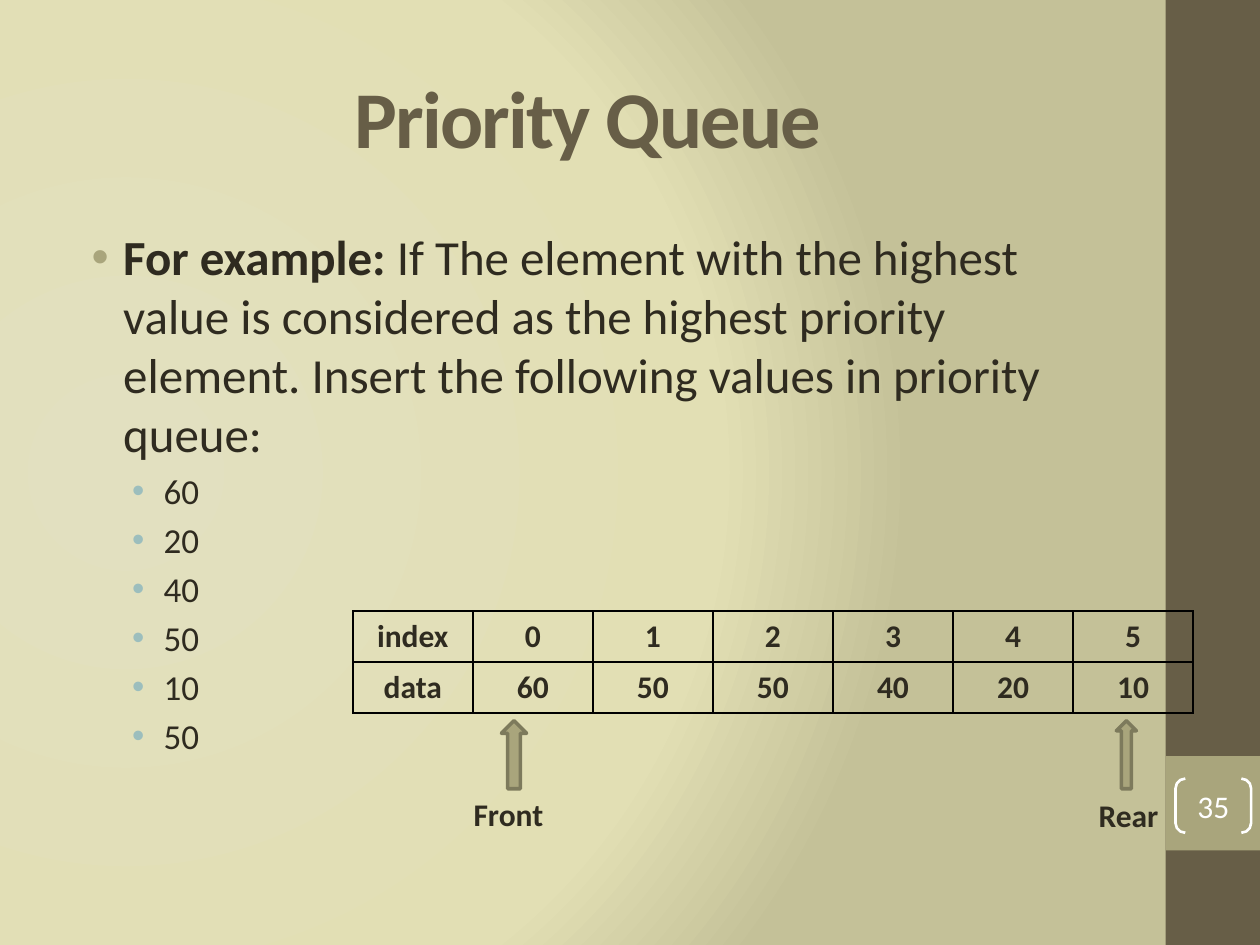
from dataclasses import dataclass

from lxml.etree import SubElement
from pptx import Presentation
from pptx.dml.color import RGBColor
from pptx.enum.shapes import MSO_SHAPE as Shape
from pptx.enum.text import MSO_ANCHOR as Anchor, PP_ALIGN as Align
from pptx.oxml import parse_xml
from pptx.oxml.ns import nsdecls, qn
from pptx.util import Emu, Inches, Pt

COLS, ROWS = 40, 30


@dataclass(frozen=True)
class Theme:
    font: str = "Calibri"
    ink: str = "2F2B20"
    brown: str = "675E47"
    olive: str = "A9A57C"
    outline: str = "7D7A5C"
    teal: str = "9CBEBD"
    white: str = "FFFFFF"
    black: str = "000000"
    glow: tuple = ((0, "E2E0C0"), (75, "E2DFB4"), (100, "C4C198"))
    title: int = 46
    body: int = 28
    item: int = 20
    label: int = 18


def rgb(color):
    return RGBColor.from_string(color)


def add_text(p, text, *, font, size, color, bold=False, spacing=None):
    r = p.add_run()
    r.text = text
    r.font.name, r.font.size, r.font.bold = font, Pt(size), bold
    r.font.color.rgb = rgb(color)
    if spacing is not None:
        r.font._element.set("spc", str(spacing * 100))
    return r


def add_bullet(p, color, margin, hang=0.25):
    """Hang a round bullet; margin and hang are in inches."""
    pPr = p._p.get_or_add_pPr()
    pPr.set("marL", str(Inches(margin)))
    pPr.set("indent", str(-Inches(hang)))
    SubElement(SubElement(pPr, qn("a:buClr")), qn("a:srgbClr"), val=color)
    SubElement(pPr, qn("a:buFont"), typeface="Arial")
    SubElement(pPr, qn("a:buChar"), char="•")


class SlideBuilder:
    """Places elements on a grid of COLS by ROWS."""

    def __init__(self, prs, theme):
        self.theme = theme
        self.col = prs.slide_width / COLS
        self.row = prs.slide_height / ROWS
        self.s = prs.slides.add_slide(prs.slide_layouts[6])

    def place(self, x, y, w, h):
        return [Emu(round(n)) for n in
                (x * self.col, y * self.row, w * self.col, h * self.row)]

    def text(self, p, text, **kw):
        return add_text(p, text, **{"font": self.theme.font, "size": self.theme.label,
                                    "color": self.theme.ink, **kw})

    def background(self):
        """Radial gradient centred left of the middle."""
        self.s.background.fill.gradient()
        old = self.s.element.find(".//" + qn("a:gradFill"))
        stops = "".join(f'<a:gs pos="{pos * 1000}"><a:srgbClr val="{color}"/></a:gs>'
                        for pos, color in self.theme.glow)
        old.getparent().replace(old, parse_xml(
            f'<a:gradFill {nsdecls("a")} rotWithShape="1"><a:gsLst>{stops}</a:gsLst>'
            '<a:path path="circle"><a:fillToRect l="20000" t="50000" r="100000" '
            'b="50000"/></a:path></a:gradFill>'))

    def shape(self, kind, *box, fill=None, line=None, width=1):
        sp = self.s.shapes.add_shape(kind, *self.place(*box))
        sp.shadow.inherit = False
        if fill:
            sp.fill.solid()
            sp.fill.fore_color.rgb = rgb(fill)
        else:
            sp.fill.background()
        if line:
            sp.line.color.rgb = rgb(line)
            sp.line.width = Pt(width)
        else:
            sp.line.fill.background()
        return sp

    def text_box(self, *box, anchor=Anchor.TOP):
        tf = self.s.shapes.add_textbox(*self.place(*box)).text_frame
        tf.word_wrap = True
        tf.vertical_anchor = anchor
        return tf

    def title(self, text, *box):
        p = self.text_box(*box, anchor=Anchor.MIDDLE).paragraphs[0]
        p.alignment = Align.CENTER
        self.text(p, text, size=self.theme.title, color=self.theme.brown,
                  bold=True, spacing=-1)

    def bullets(self, lead, text, items, *box):
        t = self.theme
        tf = self.text_box(*box)
        p = tf.paragraphs[0]
        add_bullet(p, t.olive, 0.38)
        self.text(p, lead, size=t.body, bold=True)
        self.text(p, text, size=t.body)
        for item in items:
            p = tf.add_paragraph()
            p.level = 1
            add_bullet(p, t.teal, 0.7)
            p.space_before = Pt(t.item * 0.2)
            self.text(p, item, size=t.item)

    def table(self, rows, *box):
        frame = self.s.shapes.add_table(len(rows), len(rows[0]), *self.place(*box))
        table = frame.table
        table.first_row = table.horz_banding = False
        for i, values in enumerate(rows):
            for j, value in enumerate(values):
                self.cell(table.cell(i, j), value)

    def cell(self, cell, value):
        cell.fill.background()
        tcPr = cell._tc.get_or_add_tcPr()
        for i, side in enumerate(("lnL", "lnR", "lnT", "lnB")):
            tcPr.insert(i, parse_xml(
                f'<a:{side} {nsdecls("a")} w="12700"><a:solidFill><a:srgbClr '
                f'val="{self.theme.black}"/></a:solidFill></a:{side}>'))
        p = cell.text_frame.paragraphs[0]
        p.alignment = Align.CENTER
        self.text(p, value, bold=True)

    def pointer(self, label, label_x, label_y, arrow_x, arrow_w):
        p = self.text_box(label_x, label_y, 4.08, 1.6).paragraphs[0]
        self.text(p, label, bold=True)
        self.shape(Shape.UP_ARROW, arrow_x, 22.88, arrow_w, 2.16,
                   fill=self.theme.olive, line=self.theme.outline, width=2)

    def page_number(self, number, *box):
        sp = self.shape(Shape.DOUBLE_BRACKET, *box, line=self.theme.white, width=1.5)
        sp.adjustments[0] = 0.18
        tf = sp.text_frame
        tf.margin_left = tf.margin_right = tf.margin_top = tf.margin_bottom = 0
        tf.vertical_anchor = Anchor.MIDDLE
        p = tf.paragraphs[0]
        p.alignment = Align.CENTER
        self.text(p, number, color=self.theme.white)


def main():
    prs = Presentation()
    prs.slide_width, prs.slide_height = Inches(10), Inches(7.5)
    theme = Theme()
    b = SlideBuilder(prs, theme)

    b.background()
    b.shape(Shape.RECTANGLE, 37, 0, 3, ROWS, fill=theme.brown)
    b.shape(Shape.RECTANGLE, 37, 24, 3, 3, fill=theme.olive)
    b.title("Priority Queue", 2, 1.2, 33.32, 5)
    b.bullets("For example: ",
              "If The element with the highest value is considered as the highest "
              "priority element. Insert the following values in priority queue:",
              ["60", "20", "40", "50", "10", "50"], 2, 7, 33.32, 21)
    b.page_number("35", 37.32, 24.72, 2.4, 1.72)
    b.table([["index", "0", "1", "2", "3", "4", "5"],
             ["data", "60", "50", "50", "40", "20", "10"]], 11.2, 19.4, 26.68, 3.24)
    b.pointer("Front", 14.64, 25.04, 15.92, 0.8)
    b.pointer("Rear", 34.48, 25.08, 35.44, 0.64)
    prs.save("out.pptx")


if __name__ == "__main__":
    main()
